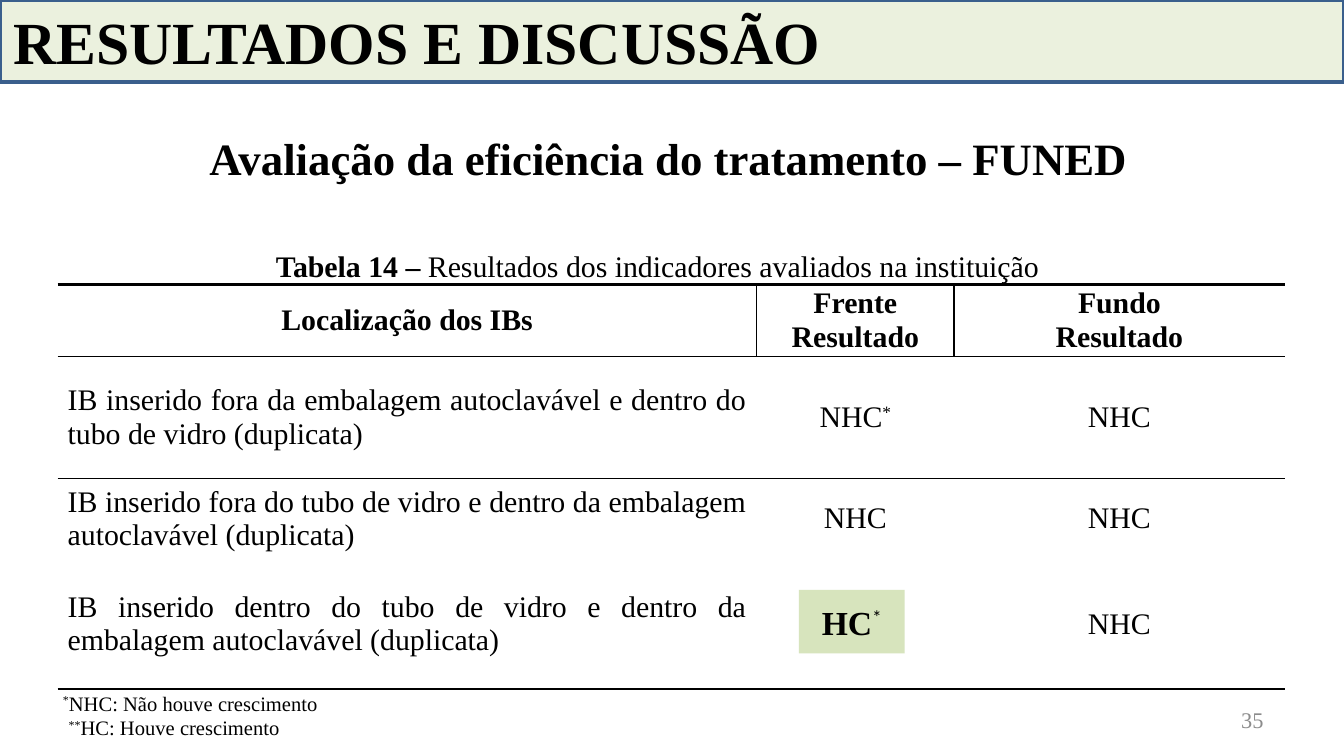
from dataclasses import dataclass
from lxml.etree import SubElement
from pptx import Presentation
from pptx.dml.color import RGBColor
from pptx.enum.shapes import MSO_SHAPE
from pptx.enum.text import MSO_ANCHOR, MSO_AUTO_SIZE, PP_ALIGN
from pptx.oxml.ns import qn
from pptx.slide import Slide
from pptx.util import Cm, Pt

NO_STYLE = "{2D5ABB26-0587-4C30-8999-92F81FD0307C}"
COLUMNS = [13.21, 3.73, 6.25]
ROWS = [1.32, 2.31, 1.52, 2.46]
HEADERS = [["Localização dos IBs"], ["Frente Resultado"], ["Fundo", "Resultado"]]
# The last "Frente" result is shown by the highlight box.
RESULTS = [
    ("IB inserido fora da embalagem autoclavável e dentro do tubo de vidro (duplicata)",
     "NHC", "*", "NHC"),
    ("IB inserido fora do tubo de vidro e dentro da embalagem autoclavável (duplicata)",
     "NHC", "", "NHC"),
    ("IB inserido dentro do tubo de vidro e dentro da embalagem autoclavável (duplicata)",
     "", "", "NHC"),
]


def rgb(color):
    return RGBColor.from_string(color)


def box(x, y, w, h):
    return Cm(x), Cm(y), Cm(w), Cm(h)


def border(cell, **widths):
    """Draw cell edges, given as L, R, T or B with a width in points."""
    tcPr = cell._tc.get_or_add_tcPr()
    for side in "LRTB":
        if side in widths:
            ln = SubElement(tcPr, qn(f"a:ln{side}"), w=str(Pt(widths[side])))
            fill = SubElement(ln, qn("a:solidFill"))
            SubElement(fill, qn("a:srgbClr"), val="000000")


@dataclass
class Deck:
    s: Slide
    font: str = "Times New Roman"
    ink: str = "000000"

    def run(self, p, text, size, bold=False, color=None, font=None, raised=False):
        r = p.add_run()
        r.text = text
        r.font.name = font or self.font
        r.font.size = Pt(size)
        r.font.bold = bold
        r.font.color.rgb = rgb(color or self.ink)
        if raised:
            r.font._element.set("baseline", "30000")

    def title(self, text, place, fill, line):
        sp = self.s.shapes.title
        sp.left, sp.top, sp.width, sp.height = place
        sp.fill.solid()
        sp.fill.fore_color.rgb = rgb(fill)
        sp.line.color.rgb = rgb(line)
        sp.line.width = Pt(2)
        tf = sp.text_frame
        tf.auto_size = MSO_AUTO_SIZE.NONE
        tf.vertical_anchor = MSO_ANCHOR.MIDDLE
        p = tf.paragraphs[0]
        p.alignment = PP_ALIGN.LEFT
        self.run(p, text, 32, bold=True)

    def text(self, place, align, anchor=MSO_ANCHOR.MIDDLE):
        """Add an unwrapped text box and return its text frame."""
        tf = self.s.shapes.add_textbox(*place).text_frame
        tf.word_wrap = False
        tf.vertical_anchor = anchor
        tf.paragraphs[0].alignment = align
        return tf

    def highlight(self, place, fill):
        """Add a filled box and return its paragraph."""
        sp = self.s.shapes.add_shape(MSO_SHAPE.RECTANGLE, *place)
        sp.shadow.inherit = False
        sp.fill.solid()
        sp.fill.fore_color.rgb = rgb(fill)
        sp.line.fill.background()
        sp.text_frame.vertical_anchor = MSO_ANCHOR.MIDDLE
        p = sp.text_frame.paragraphs[0]
        p.alignment = PP_ALIGN.CENTER
        return p

    def table(self, x, y):
        place = box(x, y, sum(COLUMNS), sum(ROWS))
        frame = self.s.shapes.add_table(len(ROWS), len(COLUMNS), *place)
        table = frame.table
        table._tbl.tblPr.find(qn("a:tableStyleId")).text = NO_STYLE
        table.first_row = table.horz_banding = False
        for column, width in zip(table.columns, COLUMNS):
            column.width = Cm(width)
        for row, height in zip(table.rows, ROWS):
            row.height = Cm(height)

        for j, lines in enumerate(HEADERS):
            cell = table.cell(0, j)
            inner = {"L": 1} if j > 0 else {}
            if j < len(HEADERS) - 1:
                inner["R"] = 1
            border(cell, T=1.5, B=1, **inner)
            for k, line in enumerate(lines):
                tf = cell.text_frame
                p = tf.add_paragraph() if k else tf.paragraphs[0]
                p.alignment = PP_ALIGN.CENTER
                self.run(p, line, 16, bold=True)

        for i, (place_text, front, mark, back) in enumerate(RESULTS, 1):
            for j, text in enumerate((place_text, front, back)):
                cell = table.cell(i, j)
                if i == 1:
                    border(cell, T=1)
                if i == len(RESULTS):
                    border(cell, B=1.5)
                p = cell.text_frame.paragraphs[0]
                p.alignment = PP_ALIGN.CENTER if j else PP_ALIGN.JUSTIFY
                if text:
                    self.run(p, text, 16)
                if j == 1 and mark:
                    self.run(p, mark, 16, raised=True)

        for cell in table.iter_cells():
            cell.fill.background()
            cell.vertical_anchor = MSO_ANCHOR.MIDDLE
            cell.margin_left = cell.margin_right = Cm(0.19)
            cell.margin_top = cell.margin_bottom = 0


def main():
    prs = Presentation()
    prs.slide_width, prs.slide_height = Cm(25.4), Cm(14.29)
    deck = Deck(prs.slides.add_slide(prs.slide_layouts[5]))

    deck.title("RESULTADOS E DISCUSSÃO", box(0, 0, 25.4, 1.55), "EBF1DE", "3A5F8C")

    tf = deck.text(box(3.71, 2.34, 18, 1.28), PP_ALIGN.LEFT, MSO_ANCHOR.TOP)
    deck.run(tf.paragraphs[0], "Avaliação da eficiência do tratamento – FUNED", 24, bold=True)

    deck.table(1.09, 5.38)

    caption = deck.text(box(4.85, 4.55, 15.16, 0.94), PP_ALIGN.CENTER).paragraphs[0]
    deck.run(caption, "Tabela 14 – ", 16, bold=True)
    deck.run(caption, "Resultados dos indicadores avaliados na instituição", 16)

    p = deck.highlight(box(15.1, 11.15, 2, 1.2), "D7E4BD")
    deck.run(p, "HC", 18, bold=True)
    deck.run(p, "*", 18, font="Calibri", raised=True)

    tf = deck.text(box(0.94, 12.9, 5.36, 1.24), PP_ALIGN.JUSTIFY)
    notes = [("*", "NHC: Não houve crescimento"), ("**", "HC: Houve crescimento")]
    for i, (mark, note) in enumerate(notes):
        p = tf.add_paragraph() if i else tf.paragraphs[0]
        p.alignment = PP_ALIGN.JUSTIFY
        p._p.get_or_add_pPr().set("marL", str(Cm(0.11 * i)))
        deck.run(p, mark, 11, raised=True)
        deck.run(p, note, 11)

    tf = deck.text(box(18.21, 13.23, 5.92, 0.76), PP_ALIGN.RIGHT)
    tf.word_wrap = True
    deck.run(tf.paragraphs[0], "35", 12, color="8C8C8C")

    prs.save("out.pptx")


if __name__ == "__main__":
    main()
